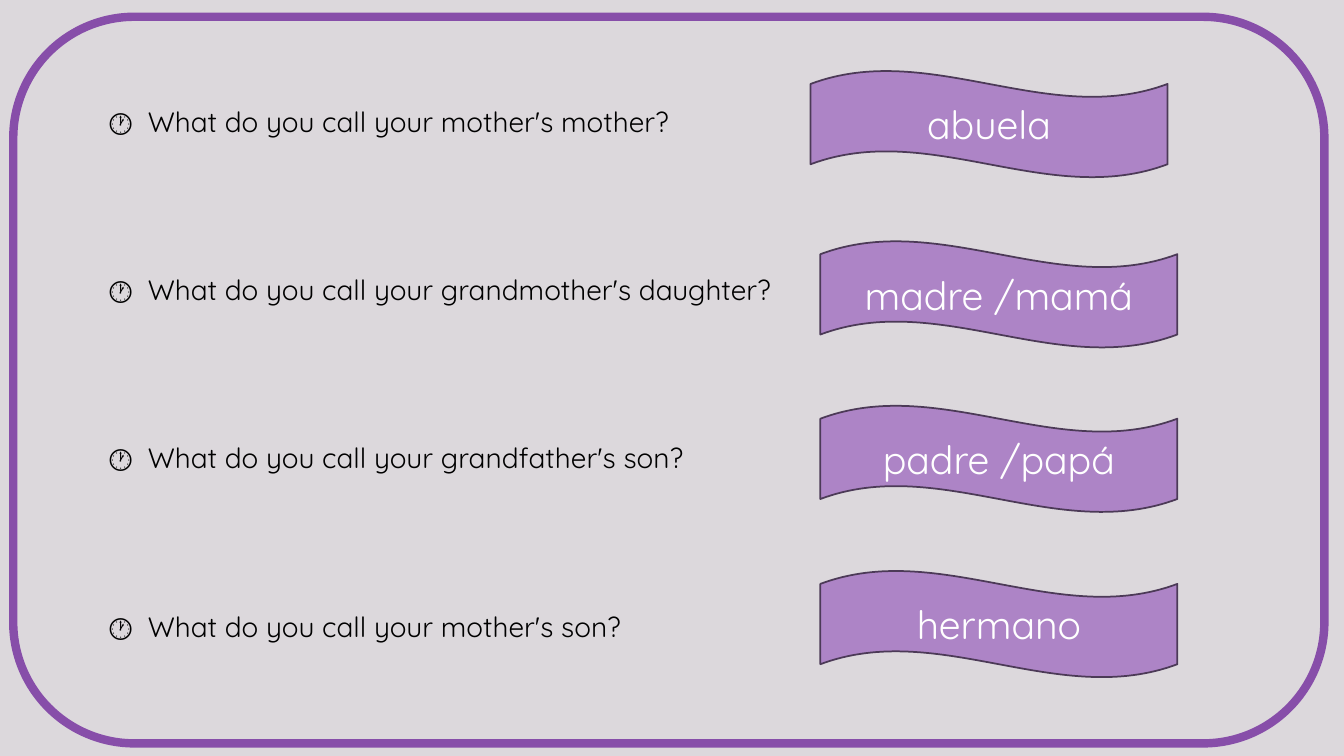
from pptx import Presentation
from pptx.dml.color import RGBColor
from pptx.enum.shapes import MSO_SHAPE as Shape
from pptx.enum.text import MSO_ANCHOR as Anchor, PP_ALIGN as Align
from pptx.util import Pt

BACKGROUND = RGBColor(0xDC, 0xD8, 0xDC)
PURPLE = RGBColor(0x87, 0x4E, 0xA9)
LILAC = RGBColor(0xAD, 0x84, 0xC6)
PLUM = RGBColor(0x4C, 0x3A, 0x57)
BLACK = RGBColor(0, 0, 0)
WHITE = RGBColor(255, 255, 255)

RELATIVES = ["mother's mother", "grandmother's daughter", "grandfather's son", "mother's son"]
ANSWERS = [
    ("abuela", 579, 50.4),
    ("madre /mamá", 586, 172),
    ("padre /papá", 586, 289.5),
    ("hermano", 586, 407.5),
]


def add_text(para, text, size, color):
    span = para.add_run()
    span.text = text
    span.font.name = "Quicksand"
    span.font.size = Pt(size)
    span.font.color.rgb = color


def add_outlined(page, kind, left, top, width, height, color, weight):
    shape = page.shapes.add_shape(kind, Pt(left), Pt(top), Pt(width), Pt(height))
    shape.shadow.inherit = False
    shape.line.color.rgb = color
    shape.line.width = Pt(weight)
    return shape


deck = Presentation()
deck.slide_width = Pt(960)
deck.slide_height = Pt(540)
page = deck.slides.add_slide(deck.slide_layouts[6])
page.background.fill.solid()
page.background.fill.fore_color.rgb = BACKGROUND

questions = page.shapes.add_textbox(Pt(70.5), Pt(70), Pt(889), Pt(395)).text_frame
questions.word_wrap = True
for row, relative in enumerate(RELATIVES):
    para = questions.add_paragraph() if row else questions.paragraphs[0]
    para.line_spacing = Pt(25)
    para.space_before = Pt(95.2 if row else 0)
    indent = para._p.get_or_add_pPr()
    indent.set("marL", str(Pt(28)))
    indent.set("indent", str(-Pt(28)))
    add_text(para, f"🕐\tWhat do you call your {relative}?", 20, BLACK)

frame = add_outlined(page, Shape.ROUNDED_RECTANGLE, 9.5, 12, 936.5, 519, PURPLE, 6)
frame.fill.background()

for answer, left, top in ANSWERS:
    banner = add_outlined(page, Shape.WAVE, left, top, 255, 76.5, PLUM, 1.25)
    banner.fill.solid()
    banner.fill.fore_color.rgb = LILAC
    banner.text_frame.word_wrap = True
    banner.text_frame.vertical_anchor = Anchor.MIDDLE
    para = banner.text_frame.paragraphs[0]
    para.alignment = Align.CENTER
    add_text(para, answer, 28, WHITE)

deck.save("out.pptx")
